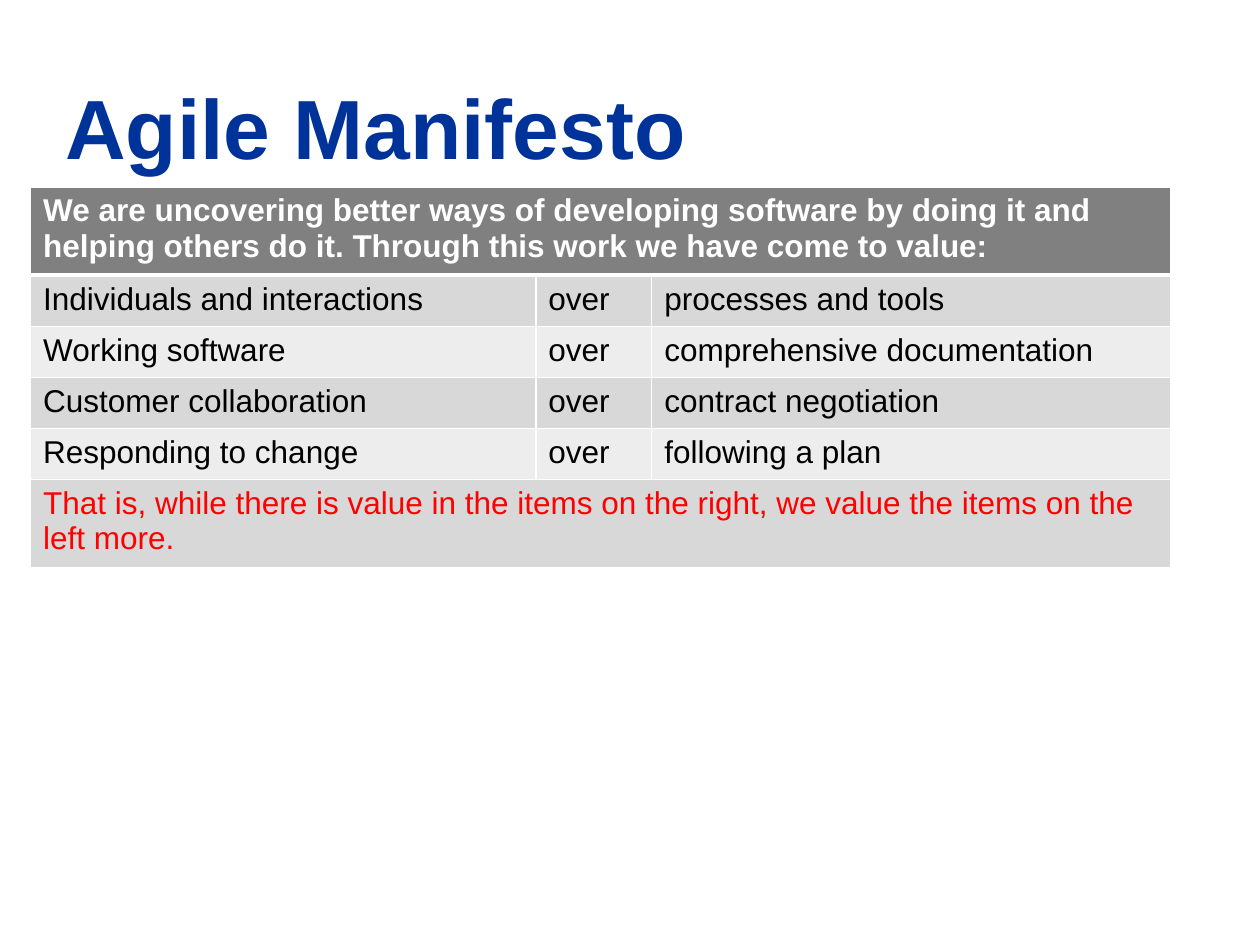
from lxml.etree import SubElement
from pptx import Presentation
from pptx.dml.color import RGBColor
from pptx.enum.text import MSO_ANCHOR
from pptx.oxml.ns import qn
from pptx.util import Pt

HUES = {
    "title": "003399",
    "head": "808080",
    "dark": "D8D8D8",
    "light": "EDEDED",
    "white": "FFFFFF",
    "black": "000000",
    "red": "FF0000",
}
INTRO = ("We are uncovering better ways of developing software by doing it "
         "and helping others do it. Through this work we have come to value:")
PAIRS = [
    ("Individuals and interactions", "processes and tools"),
    ("Working software", "comprehensive documentation"),
    ("Customer collaboration", "contract negotiation"),
    ("Responding to change", "following a plan"),
]
CLOSE = ("That is, while there is value in the items on the right, "
         "we value the items on the left more.")
WIDTHS = [288.72, 66.24, 296.64]
TALL, SHORT = 46.8, 29.2


def style(para, size, hue, bold=False):
    font = para.font
    font.name = "Arial"
    font.size = Pt(size)
    font.bold = bold
    font.color.rgb = RGBColor.from_string(HUES[hue])


def add_title(slide, text):
    box = slide.shapes.add_textbox(Pt(30.24), Pt(15.12), Pt(592.56), Pt(89.28))
    frame = box.text_frame
    frame.word_wrap = True
    frame.vertical_anchor = MSO_ANCHOR.BOTTOM
    frame.text = text
    style(frame.paragraphs[0], 48, "title", True)


def add_lines(cell, top, bottom):
    props = cell._tc.get_or_add_tcPr()
    sides = [("L", 1), ("R", 1), ("T", top), ("B", bottom)]
    for place, (side, width) in enumerate(sides):
        line = SubElement(props, qn(f"a:ln{side}"), w=str(Pt(width)))
        fill = SubElement(line, qn("a:solidFill"))
        SubElement(fill, qn("a:srgbClr"), val=HUES["white"])
        props.insert(place, line)


def fill_row(table, row, texts, back, hue, bold=False):
    table.rows[row].height = Pt(TALL if len(texts) == 1 else SHORT)
    for col in range(len(WIDTHS)):
        cell = table.cell(row, col)
        cell.fill.solid()
        cell.fill.fore_color.rgb = RGBColor.from_string(HUES[back])
        add_lines(cell, 3 if row == 1 else 1, 3 if row == 0 else 1)
    for col, text in enumerate(texts):
        cell = table.cell(row, col)
        cell.text = text
        style(cell.text_frame.paragraphs[0], 18, hue, bold)
    if len(texts) == 1:
        table.cell(row, 0).merge(table.cell(row, len(WIDTHS) - 1))


def add_values(slide):
    count = len(PAIRS) + 2
    high = 2 * TALL + len(PAIRS) * SHORT
    table = slide.shapes.add_table(
        count, len(WIDTHS), Pt(17.5), Pt(106.8), Pt(sum(WIDTHS)), Pt(high)).table
    for column, width in zip(table.columns, WIDTHS):
        column.width = Pt(width)
    fill_row(table, 0, [INTRO], "head", "white", True)
    for row, (left, right) in enumerate(PAIRS, 1):
        back = "dark" if row % 2 else "light"
        fill_row(table, row, [left, "over", right], back, "black")
    fill_row(table, count - 1, [CLOSE], "dark", "red")


def main():
    deck = Presentation()
    deck.slide_width, deck.slide_height = Pt(720), Pt(540)
    slide = deck.slides.add_slide(deck.slide_layouts[6])
    add_title(slide, "Agile Manifesto")
    add_values(slide)
    deck.save("out.pptx")


if __name__ == "__main__":
    main()
